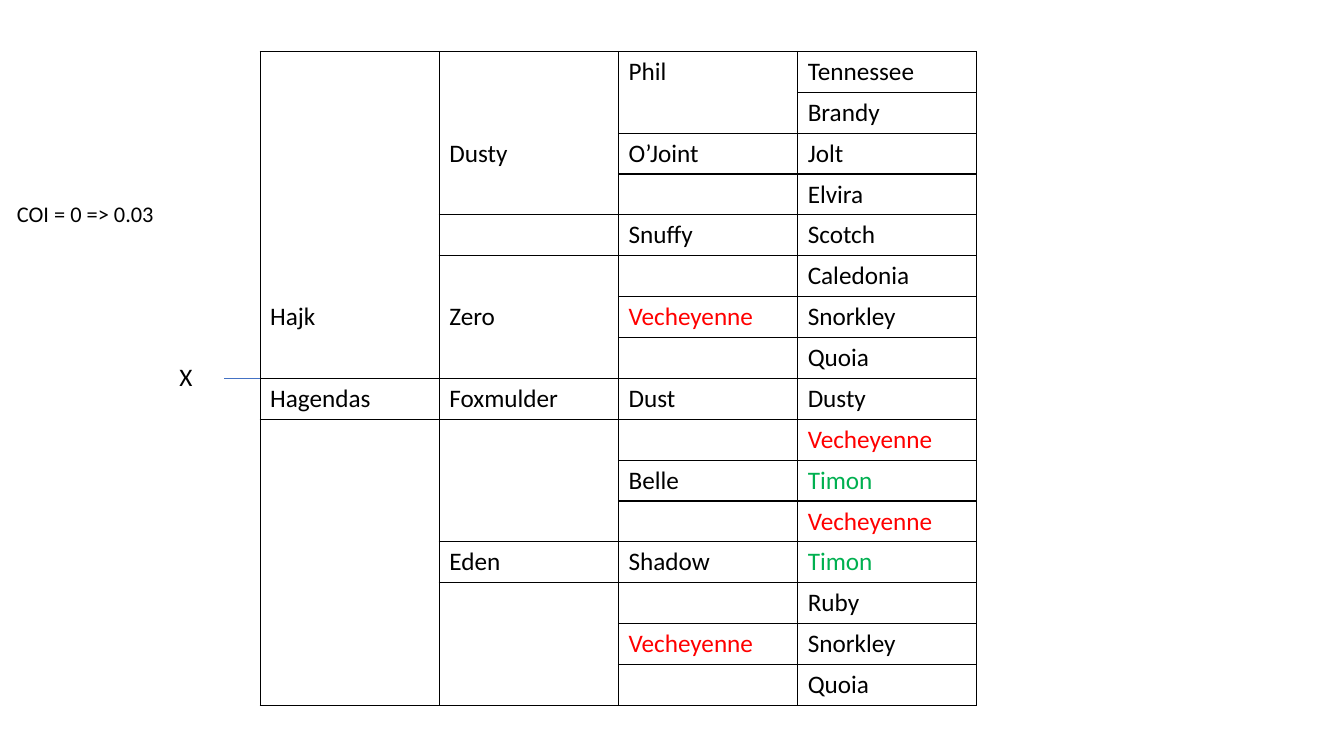
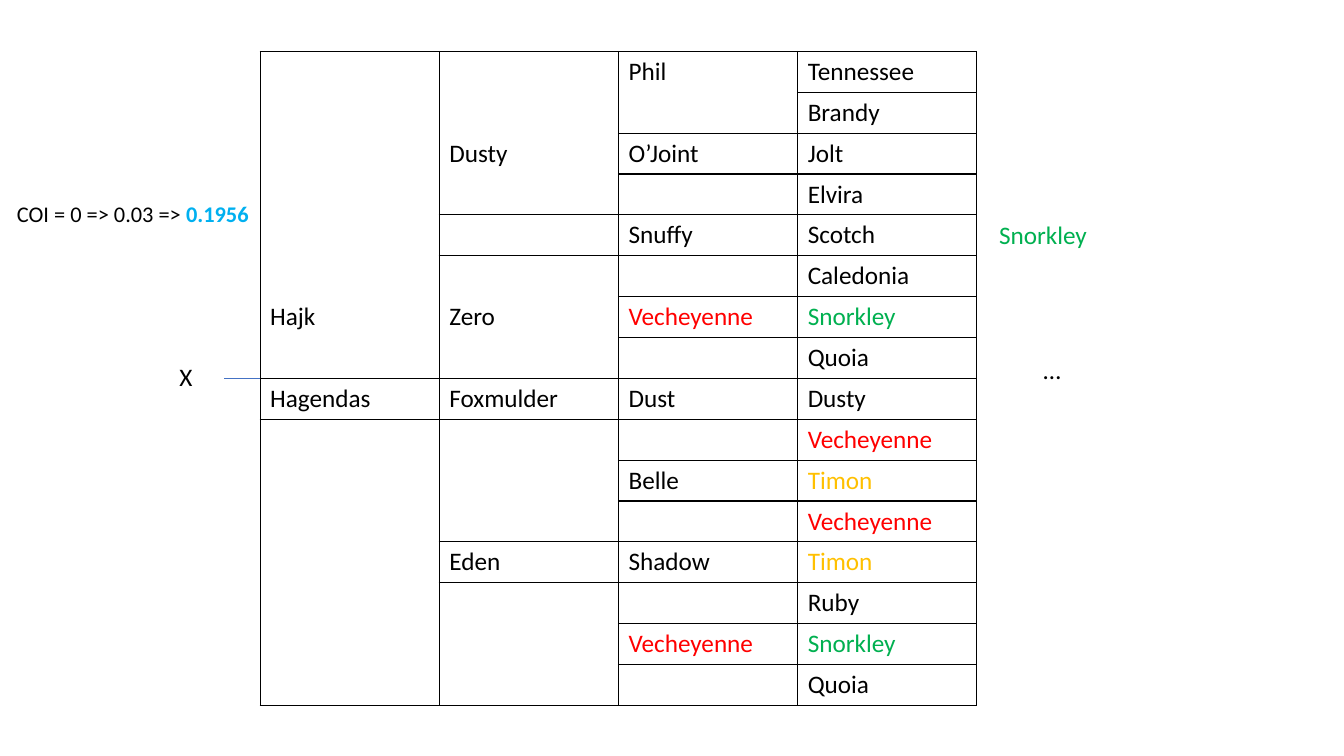
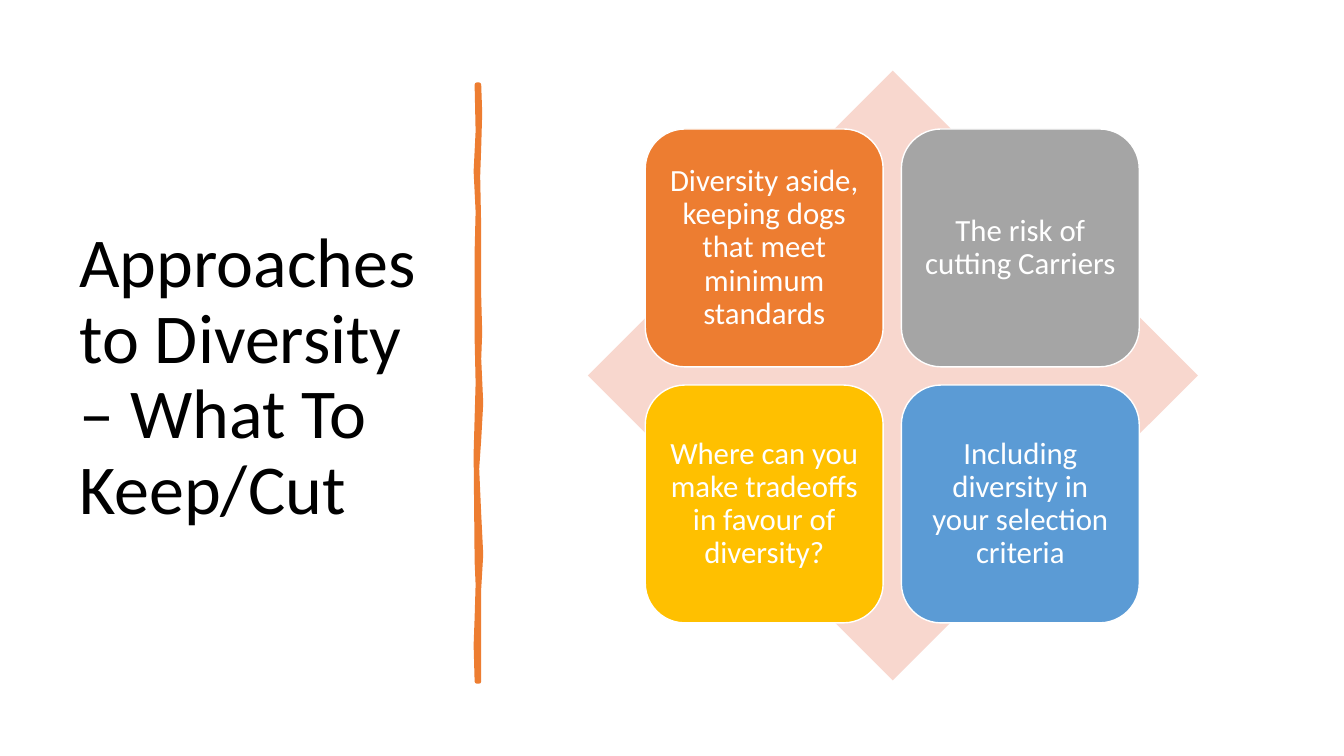
from dataclasses import dataclass
from itertools import product

from lxml import etree
from pptx import Presentation
from pptx.dml.color import RGBColor
from pptx.enum.shapes import MSO_CONNECTOR as Connector, MSO_SHAPE as Shape
from pptx.enum.text import MSO_ANCHOR as Anchor, PP_ALIGN as Align
from pptx.oxml.ns import qn
from pptx.util import Inches, Pt


@dataclass(frozen=True)
class Theme:
    font: str = "Calibri"
    black: str = "000000"
    white: str = "FFFFFF"
    red: str = "FF0000"
    green: str = "00B050"
    cyan: str = "00B0F0"
    blue: str = "4472C4"
    light_blue: str = "5B9BD5"
    orange: str = "ED7D31"
    gray: str = "A5A5A5"
    gold: str = "FFC000"
    pink: str = "F8D7CE"
    title_size: float = 50
    tile_size: float = 22
    name_size: float = 18
    note_size: float = 16


THEME = Theme()

# Pedigree: one column per generation, with the row of each name
ROW_COUNT = 16
GENERATIONS = [
    {6: "Hajk", 8: "Hagendas"},
    {2: "Dusty", 6: "Zero", 8: "Foxmulder", 12: "Eden"},
    {0: "Phil", 2: "O’Joint", 4: "Snuffy", 6: "Vecheyenne",
     8: "Dust", 10: "Belle", 12: "Shadow", 14: "Vecheyenne"},
    dict(enumerate([
        "Tennessee", "Brandy", "Jolt", "Elvira", "Scotch", "Caledonia",
        "Snorkley", "Quoia", "Dusty", "Vecheyenne", "Timon", "Vecheyenne",
        "Timon", "Ruby", "Snorkley", "Quoia"])),
]
# Rows that have a rule below them, per generation
RULED_ROWS = [
    {7, 8, 15},
    {3, 4, 7, 8, 11, 12, 15},
    set(range(1, ROW_COUNT)),
    set(range(ROW_COUNT)),
]

# Edges of the hand-drawn divider, from top to bottom
DIVIDER_RIGHT = [
    (4.75, 0.84), (4.76, 1.12), (4.75, 1.46), (4.74, 1.75), (4.75, 2.26),
    (4.75, 2.94), (4.76, 3.3), (4.75, 3.56), (4.77, 4.0), (4.75, 4.36),
    (4.73, 4.65), (4.75, 5.1), (4.77, 5.5), (4.75, 5.84), (4.75, 6.76)]
DIVIDER_LEFT = [
    (4.73, 0.84), (4.74, 1.3), (4.72, 1.7), (4.74, 2.1), (4.73, 2.5),
    (4.73, 3.35), (4.74, 3.8), (4.73, 4.15), (4.72, 4.5), (4.73, 5.57),
    (4.74, 5.8), (4.73, 6.13), (4.72, 6.4), (4.73, 6.76)]


def color(value):
    return RGBColor.from_string(value)


def style_span(span, size, tint, bold=False):
    span.font.name = THEME.font
    span.font.size = Pt(size)
    span.font.bold = bold
    span.font.color.rgb = color(tint)


def paint(shape, fill, line=None, width=1):
    shape.shadow.inherit = False
    shape.fill.solid()
    shape.fill.fore_color.rgb = color(fill)
    if line:
        shape.line.color.rgb = color(line)
        shape.line.width = Pt(width)
    else:
        shape.line.fill.background()


def add_text(page, area, spans, size, wrap=True):
    """Add a one-paragraph text box; spans holds (text, color, bold)."""
    box = page.shapes.add_textbox(*map(Inches, area))
    box.text_frame.word_wrap = wrap
    para = box.text_frame.paragraphs[0]
    for text, tint, bold in spans:
        span = para.add_run()
        span.text = text
        style_span(span, size, tint, bold)
    return box


def set_borders(cell, top, bottom):
    """Rule both sides of a cell, and its top and bottom on request."""
    properties = cell._tc.get_or_add_tcPr()
    edges = {"lnL": True, "lnR": True, "lnT": top, "lnB": bottom}
    for place, (tag, ruled) in enumerate(edges.items()):
        line = etree.Element(qn(f"a:{tag}"), w=str(Pt(1)))
        if ruled:
            fill = etree.SubElement(line, qn("a:solidFill"))
            etree.SubElement(fill, qn("a:srgbClr"), val=THEME.black)
        else:
            etree.SubElement(line, qn("a:noFill"))
        properties.insert(place, line)


def add_pedigree(page, name_colors):
    frame = page.shapes.add_table(
        ROW_COUNT, len(GENERATIONS),
        Inches(2.58), Inches(0.51), Inches(7.11), Inches(6.49))
    table = frame.table
    table.first_row = table.horz_banding = False
    for column, row in product(range(len(GENERATIONS)), range(ROW_COUNT)):
        cell = table.cell(row, column)
        cell.fill.background()
        ruled = RULED_ROWS[column]
        set_borders(cell, row == 0 or row - 1 in ruled, row in ruled)
        name = GENERATIONS[column].get(row)
        if name:
            cell.text_frame.text = name
            style_span(cell.text_frame.paragraphs[0].runs[0],
                       THEME.name_size, name_colors.get(name, THEME.black))


def add_line(page, start, end):
    line = page.shapes.add_connector(
        Connector.STRAIGHT, *map(Inches, start + end))
    line.line.color.rgb = color(THEME.blue)
    line.line.width = Pt(0.5)
    etree.SubElement(line._element.spPr, qn("a:effectLst"))


def add_pedigree_page(page, name_colors, note):
    add_pedigree(page, name_colors)
    add_text(page, (1.68, 3.54, 0.33, 0.4), [("X", THEME.black, False)],
             THEME.name_size, wrap=False)
    add_line(page, (2.58, 3.75), (2.22, 3.75))
    add_text(page, (0.07, 1.94, 2.51, 0.37), note, THEME.note_size)


def add_title(page, text):
    box = add_text(page, (0.69, 0.7, 3.74, 6.11),
                   [(text, THEME.black, False)], THEME.title_size)
    box.text_frame.vertical_anchor = Anchor.MIDDLE
    box.text_frame.paragraphs[0].line_spacing = 0.9


def add_divider(page):
    points = [(Inches(x), Inches(y))
              for x, y in DIVIDER_RIGHT + DIVIDER_LEFT[::-1]]
    builder = page.shapes.build_freeform(*points[0])
    builder.add_line_segments(points[1:], close=True)
    divider = builder.convert_to_shape()
    paint(divider, THEME.orange, THEME.orange, 3.25)
    etree.SubElement(divider.line._get_or_add_ln(), qn("a:round"))


def add_tile(page, left, top, text, fill):
    tile = page.shapes.add_shape(
        Shape.ROUNDED_RECTANGLE,
        Inches(left), Inches(top), Inches(2.36), Inches(2.36))
    paint(tile, fill, THEME.white)
    frame = tile.text_frame
    frame.word_wrap = True
    frame.vertical_anchor = Anchor.MIDDLE
    frame.margin_left = frame.margin_right = Inches(0.09)
    frame.margin_top = frame.margin_bottom = Inches(0.09)
    frame.text = text
    para = frame.paragraphs[0]
    para.alignment = Align.CENTER
    para.line_spacing = 0.9
    para.space_after = Pt(0.35 * THEME.tile_size)
    style_span(para.runs[0], THEME.tile_size, THEME.white)


def add_matrix(page, tiles):
    """Four tiles in a square, over a diamond."""
    diamond = page.shapes.add_shape(
        Shape.DIAMOND, Inches(5.83), Inches(0.7), Inches(6.05), Inches(6.05))
    paint(diamond, THEME.pink)
    pitch = 2.54
    for index, (text, fill) in enumerate(tiles):
        row, column = divmod(index, 2)
        add_tile(page, 6.4 + column * pitch, 1.28 + row * pitch, text, fill)


def main():
    deck = Presentation()
    deck.slide_width, deck.slide_height = Inches(13.33), Inches(7.5)
    first, second, third = (
        deck.slides.add_slide(deck.slide_layouts[6]) for _ in range(3))

    # Pedigree with two repeated ancestors
    add_pedigree_page(
        first, {"Vecheyenne": THEME.red, "Timon": THEME.green},
        [("COI = 0 => 0.03", THEME.black, False)])

    # Pedigree with a third repeated ancestor
    add_pedigree_page(
        second,
        {"Vecheyenne": THEME.red, "Timon": THEME.gold,
         "Snorkley": THEME.green},
        [("COI = 0 => 0.03 => ", THEME.black, False),
         ("0.1956", THEME.cyan, True)])
    add_text(second, (10.25, 3.47, 1.94, 0.4), [("…", THEME.black, False)],
             THEME.name_size)
    add_text(second, (9.81, 2.13, 1.79, 0.4),
             [("Snorkley", THEME.green, False)], THEME.name_size)

    # Approaches to diversity
    add_title(third, "Approaches to Diversity – What To Keep/Cut")
    add_divider(third)
    add_matrix(third, [
        ("Diversity aside, keeping dogs that meet minimum standards",
         THEME.orange),
        ("The risk of cutting Carriers", THEME.gray),
        ("Where can you make tradeoffs in favour of diversity?", THEME.gold),
        ("Including diversity in your selection criteria",
         THEME.light_blue),
    ])

    deck.save("out.pptx")


if __name__ == "__main__":
    main()
